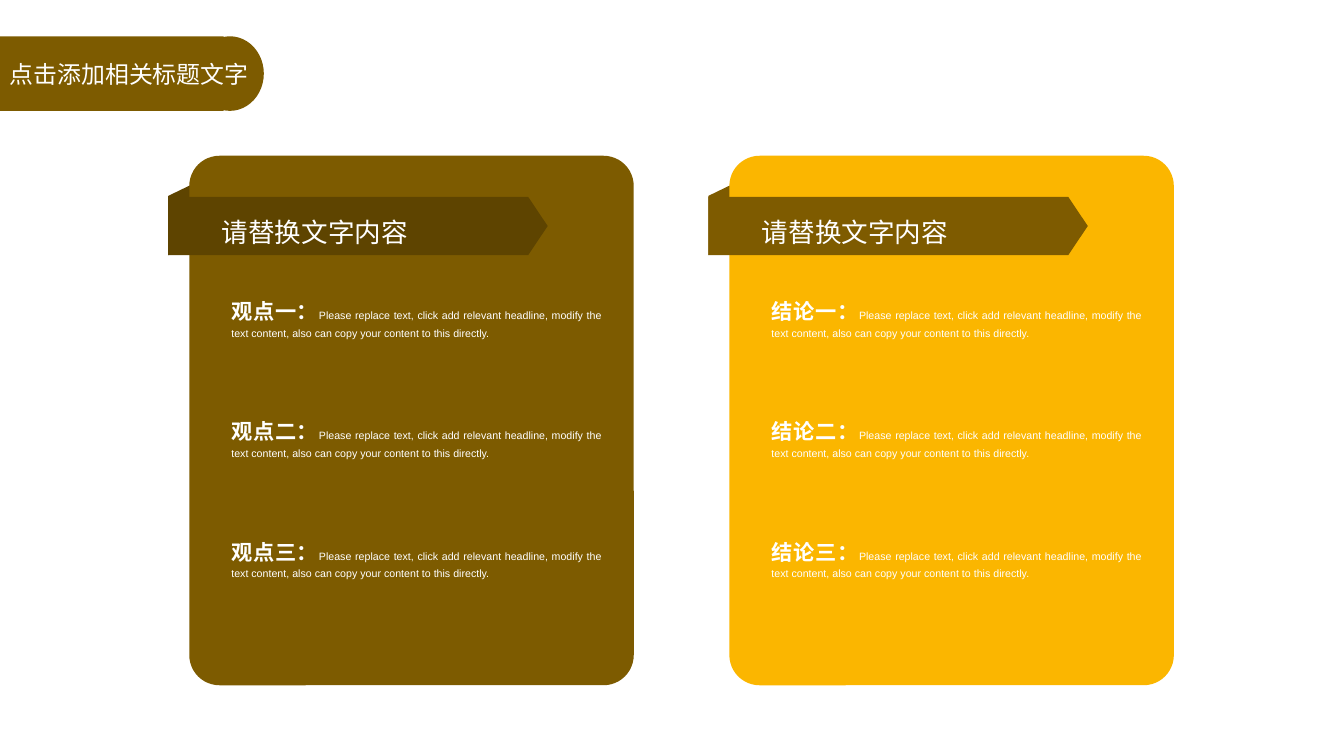
from dataclasses import dataclass

from lxml import etree
from pptx import Presentation
from pptx import util as u
from pptx.dml import color
from pptx.enum import shapes, text
from pptx.oxml import ns


@dataclass(frozen=True)
class Theme:
    brown: str = "7D5B00"
    dark: str = "5E4400"
    tan: str = "7E5B00"
    gold: str = "FBB600"
    white: str = "FFFFFF"
    font: str = "Arial"
    cjk: str = "Noto Sans CJK SC"
    title: int = 18
    head: int = 20
    label: int = 16
    body: int = 8
    line: float = 1.2
    gap: int = 56


class Deck:
    def __init__(self, theme):
        self.theme = theme
        self.file = Presentation()
        self.file.slide_width = u.Inches(14.06)
        self.file.slide_height = u.Inches(7.91)
        self.slide = self.file.slides.add_slide(self.file.slide_layouts[4])

    def paint(self, shape, fill):
        shape.shadow.inherit = False
        shape.fill.solid()
        shape.fill.fore_color.rgb = color.RGBColor.from_string(fill)
        shape.line.fill.background()

    def shape(self, kind, box, fill, adjust=None):
        shape = self.slide.shapes.add_shape(kind, *map(u.Inches, box))
        if adjust is not None:
            shape.adjustments[0] = adjust
        self.paint(shape, fill)

    def outline(self, points, fill):
        points = [(u.Inches(x), u.Inches(y)) for x, y in points]
        form = self.slide.shapes.build_freeform(*points[0])
        form.add_line_segments(points[1:])
        self.paint(form.convert_to_shape(), fill)

    def style(self, run, size, bold=False, font=None):
        run.font.size = u.Pt(size)
        run.font.bold = bold
        run.font.name = font or self.theme.font
        run.font.color.rgb = color.RGBColor.from_string(self.theme.white)

    def holder(self, index, box, words):
        holder = self.slide.placeholders[index]
        holder.left, holder.top, holder.width, holder.height = map(u.Inches, box)
        holder.element.getparent().append(holder.element)
        frame = holder.text_frame
        frame.text = words
        frame.word_wrap = True
        frame.auto_size = text.MSO_AUTO_SIZE.NONE
        return frame

    def title(self, box, words):
        frame = self.holder(0, box, words)
        frame.vertical_anchor = text.MSO_ANCHOR.MIDDLE
        para = frame.paragraphs[0]
        para.alignment = text.PP_ALIGN.LEFT
        self.style(para.runs[0], self.theme.title, font=self.theme.cjk)

    def block(self, index, box, words, align):
        frame = self.holder(index, box, words)
        frame.vertical_anchor = text.MSO_ANCHOR.TOP
        frame.margin_left = frame.margin_right = 0
        frame.margin_top = frame.margin_bottom = 0
        for para in frame.paragraphs:
            para.alignment = align
            para.line_spacing = self.theme.line
            para.space_before = u.Pt(0)
            props = para._p.get_or_add_pPr()
            props.set("marL", "0")
            props.set("indent", "0")
            etree.SubElement(props, ns.qn("a:buNone"))
        return frame

    def heading(self, index, box, words):
        frame = self.block(index, box, words, text.PP_ALIGN.LEFT)
        self.style(frame.paragraphs[0].runs[0], self.theme.head)

    def points(self, index, box, labels, detail):
        frame = self.block(index, box, "\n".join(labels), text.PP_ALIGN.JUSTIFY)
        for row, para in enumerate(frame.paragraphs):
            para.space_before = u.Pt(self.theme.gap if row else 0)
            self.style(para.runs[0], self.theme.label, bold=True)
            run = para.add_run()
            run.text = detail
            self.style(run, self.theme.body)

    def card(self, left, fill, band):
        kind = shapes.MSO_SHAPE
        edge, inner = left - 0.22, left + 0.09
        fold = [(edge, 2.05), (inner, 1.9), (inner, 2.52), (edge, 2.67)]
        self.outline(fold, band)
        self.shape(kind.ROUNDED_RECTANGLE, (left, 1.63, 4.65, 5.54), fill, 0.068)
        self.shape(kind.PENTAGON, (edge, 2.06, 3.97, 0.61), band, 0.335)


def main():
    theme = Theme()
    deck = Deck(theme)
    kind = shapes.MSO_SHAPE
    deck.shape(kind.RECTANGLE, (0, 0.38, 2.34, 0.78), theme.brown)
    deck.shape(kind.OVAL, (2.05, 0.38, 0.71, 0.78), theme.brown)
    detail = ("Please replace text, click add relevant headline, modify the "
              "text content, also can copy your content to this directly.")
    cards = [("观点", theme.brown, theme.dark), ("结论", theme.gold, theme.tan)]
    for col, (topic, fill, band) in enumerate(cards):
        left = 1.98 + 5.65 * col
        deck.card(left, fill, band)
        deck.heading(1 + 2 * col, (left + 0.34, 2.19, 2.61, 0.37), "请替换文字内容")
        labels = [f"{topic}{mark}：" for mark in "一二三"]
        deck.points(2 + 2 * col, (left + 0.44, 3.07, 3.88, 3.11), labels, detail)
    deck.title((0, 0.57, 2.76, 0.4), "点击添加相关标题文字")
    deck.file.save("out.pptx")


if __name__ == "__main__":
    main()
